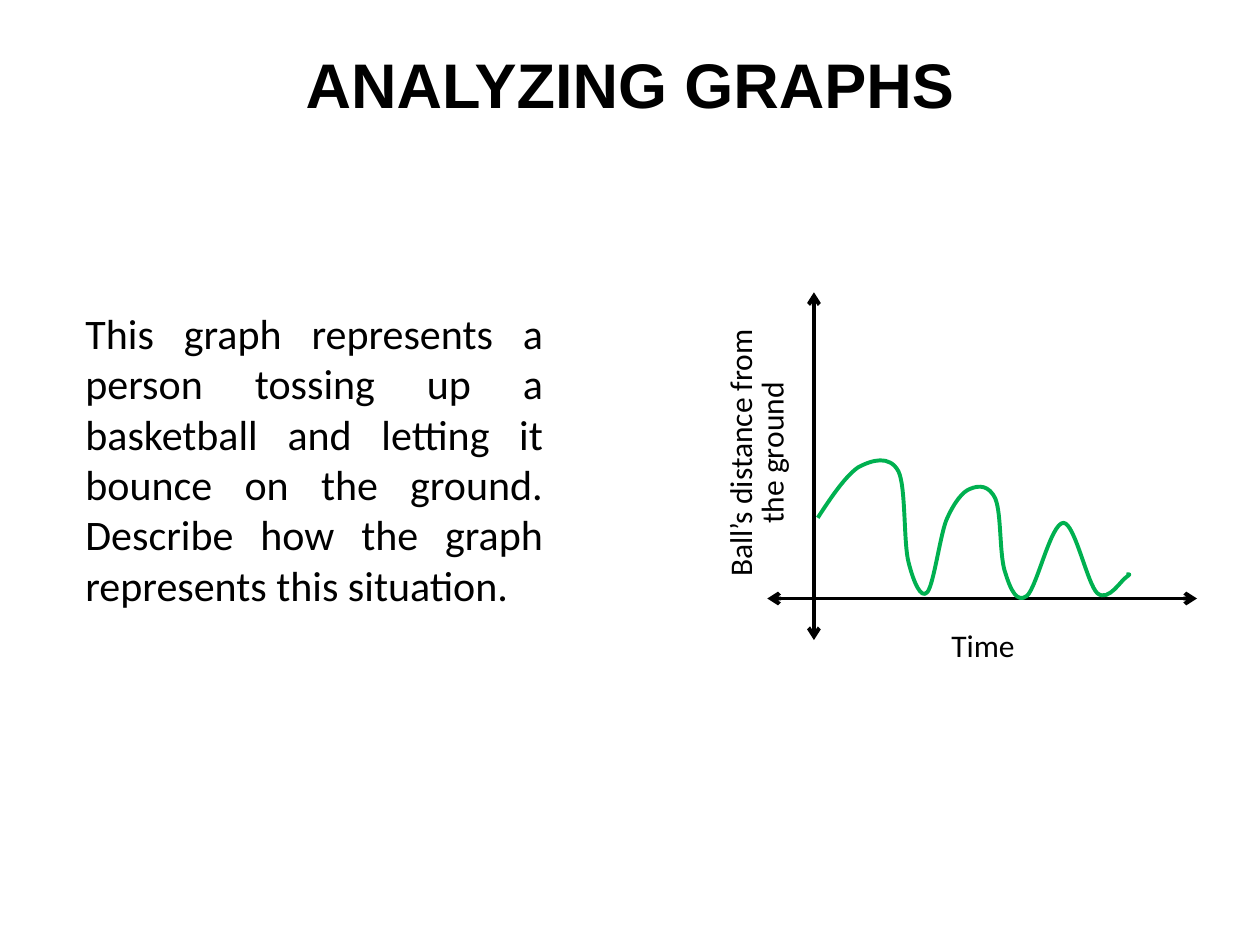
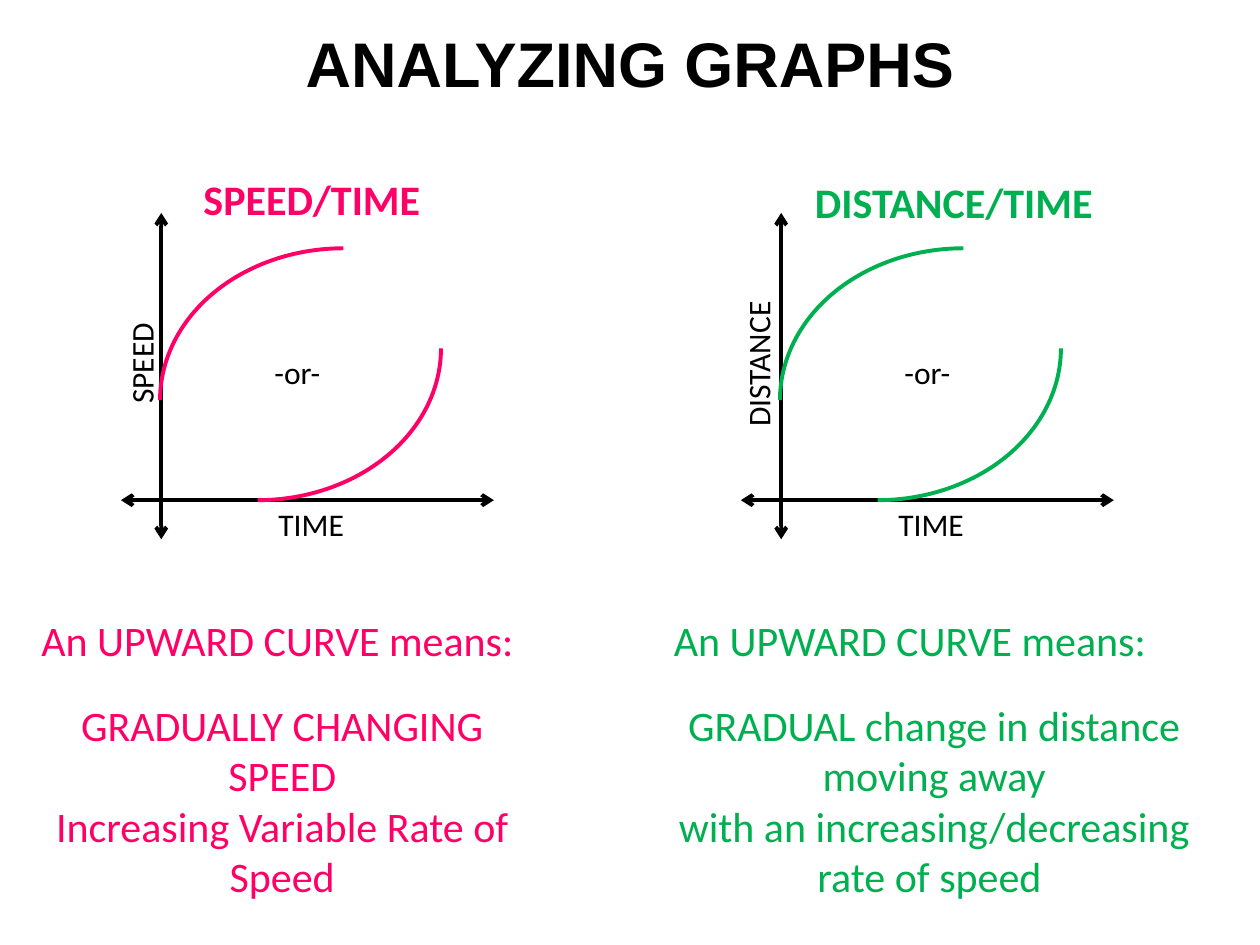
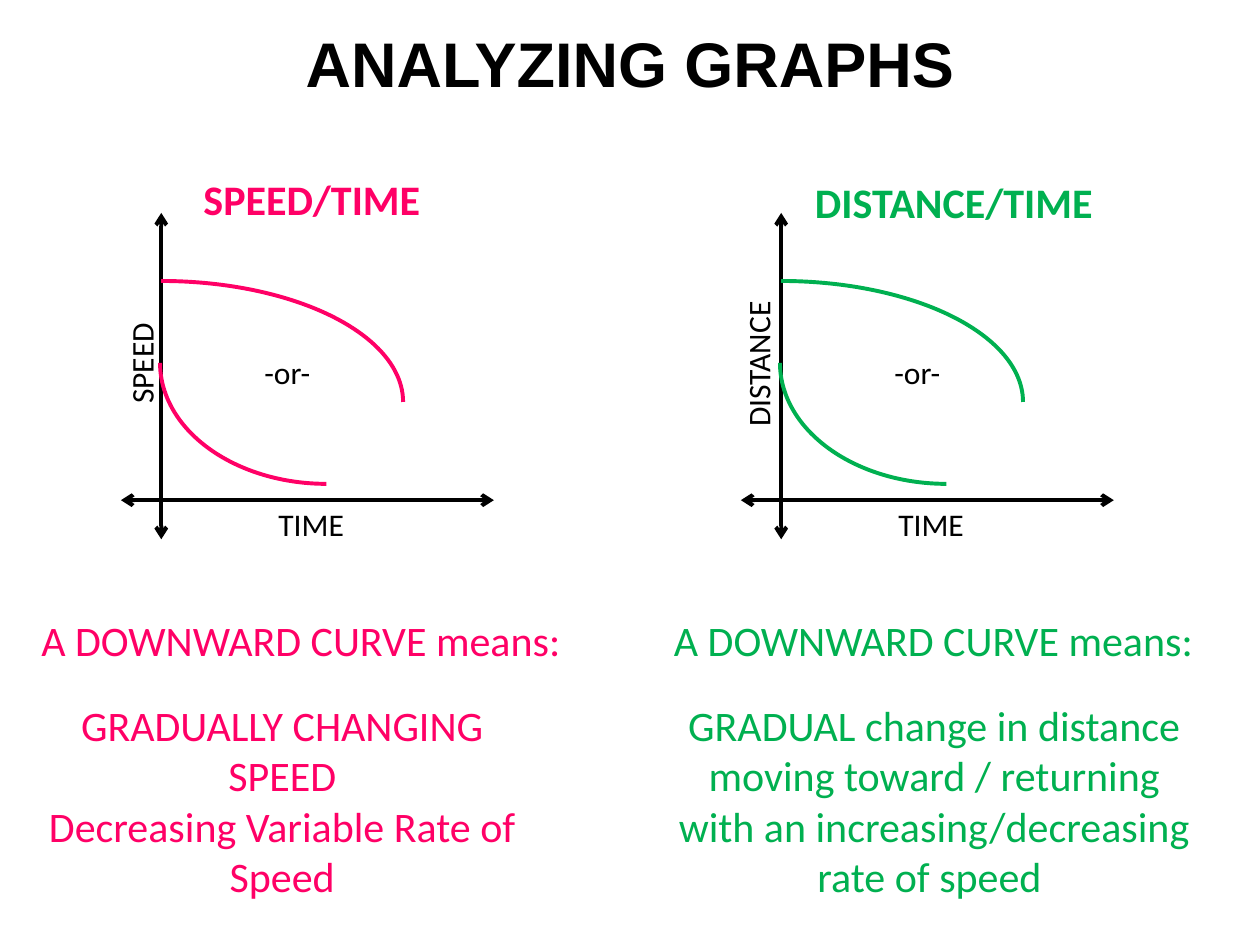
from dataclasses import dataclass

from lxml.etree import SubElement
from pptx import Presentation
from pptx.dml.color import RGBColor
from pptx.enum.shapes import MSO_CONNECTOR, MSO_SHAPE
from pptx.enum.text import MSO_ANCHOR, MSO_AUTO_SIZE, PP_ALIGN
from pptx.oxml.ns import qn
from pptx.util import Pt

EMU_PER_PX = 9144  # 100 px to the inch
BLACK = RGBColor(0x00, 0x00, 0x00)
PINK = RGBColor(0xFF, 0x00, 0x66)
GREEN = RGBColor(0x00, 0xB0, 0x50)
TITLE_FONT = "Arial"
BODY_FONT = "Calibri"
LINE_WIDTH = Pt(2.25)

# Start point, then two control points and an end point for each bounce segment
BOUNCE_START = (649, 411)
BOUNCE_SEGMENTS = [
    [(660, 394), (671, 378), (681, 371)],
    [(692, 365), (706, 361), (713, 374)],
    [(719, 386), (717, 430), (721, 446)],
    [(725, 462), (731, 476), (736, 470)],
    [(741, 464), (746, 426), (751, 413)],
    [(757, 399), (764, 390), (770, 388)],
    [(777, 385), (785, 385), (790, 396)],
    [(795, 408), (793, 442), (798, 455)],
    [(802, 468), (807, 479), (815, 473)],
    [(823, 466), (834, 415), (844, 415)],
    [(853, 415), (863, 464), (871, 471)],
    [(880, 478), (890, 460), (894, 458)],
    [(898, 455), (896, 456), (894, 456)],
]

# Box and rotation of each arc in the left panel
UPWARD_ARCS = [((84, 131, 241, 291), 90), ((152, 172, 241, 291), 270)]
DOWNWARD_ARCS = [((-64, 223, 384, 192), 0), ((127, 192, 264, 192), 180)]


@dataclass
class Panel:
    colour: RGBColor
    graph_shift: int
    or_shift: int
    heading: str
    heading_box: tuple
    axis_label: str
    axis_label_box: tuple
    lead_box: tuple
    meaning_box: tuple


SPEED_PANEL = Panel(PINK, 0, 0, "SPEED/TIME", (128, 133, 239, 50),
                    "SPEED", (-7, 273, 239, 31),
                    (23, 483, 452, 50), (23, 550, 402, 172))
DISTANCE_PANEL = Panel(GREEN, 492, 500, "DISTANCE/TIME", (625, 135, 264, 50),
                       "DISTANCE", (485, 271, 239, 36),
                       (525, 483, 458, 50), (525, 550, 433, 172))


def px(*lengths):
    return [length * EMU_PER_PX for length in lengths]


def add_text(shapes, box, paragraphs, size=18, colour=BLACK, bold=False,
             align=PP_ALIGN.CENTER, font=BODY_FONT):
    """Add a text box; each paragraph is a list of lines."""
    shape = shapes.add_textbox(*px(*box))
    frame = shape.text_frame
    frame.word_wrap = True
    frame.auto_size = MSO_AUTO_SIZE.SHAPE_TO_FIT_TEXT
    for index, lines in enumerate(paragraphs):
        paragraph = frame.add_paragraph() if index else frame.paragraphs[0]
        paragraph.alignment = align
        for line_index, line in enumerate(lines):
            if line_index:
                paragraph.add_line_break()
            run = paragraph.add_run()
            run.text = line
            run.font.name = font
            run.font.size = Pt(size)
            run.font.bold = bold
            run.font.color.rgb = colour
    return shape


def add_title(slide, top):
    shape = add_text(slide.shapes, (0, top, 1000, 83), [["ANALYZING GRAPHS"]],
                     size=36, bold=True, font=TITLE_FONT)
    shape.text_frame.auto_size = MSO_AUTO_SIZE.NONE
    shape.text_frame.vertical_anchor = MSO_ANCHOR.MIDDLE


def style_line(shape, colour):
    shape.line.color.rgb = colour
    shape.line.width = LINE_WIDTH


def add_axis(shapes, start, end):
    """Add a black line with an arrowhead at both ends."""
    axis = shapes.add_connector(MSO_CONNECTOR.STRAIGHT, *px(*start, *end))
    style_line(axis, BLACK)
    line = axis.line._get_or_add_ln()
    for end_tag in ("a:headEnd", "a:tailEnd"):
        SubElement(line, qn(end_tag), type="arrow")
    SubElement(axis._element.spPr, qn("a:effectLst"))


def add_axis_label(shapes, box, label):
    """Add a label that reads upward beside the vertical axis."""
    shape = add_text(shapes, box, [[label]])
    shape.rotation = 270
    shape.text_frame.paragraphs[0].line_spacing = Pt(18)


def add_arc(slide, box, rotation, colour):
    arc = slide.shapes.add_shape(MSO_SHAPE.ARC, *px(*box))
    arc.rotation = rotation
    arc.shadow.inherit = False
    arc.fill.background()
    style_line(arc, colour)


def add_bounce_curve(shapes):
    builder = shapes.build_freeform(*BOUNCE_START, scale=EMU_PER_PX)
    for segment in BOUNCE_SEGMENTS:
        builder.add_line_segments(segment, close=False)
    curve = builder.convert_to_shape()
    curve.shadow.inherit = False
    curve.fill.background()
    style_line(curve, GREEN)
    # Join every three straight steps into one cubic Bézier segment
    steps = list(curve._element.iter(qn("a:lnTo")))
    for first, second, third in zip(steps[::3], steps[1::3], steps[2::3]):
        first.tag = qn("a:cubicBezTo")
        for step in (second, third):
            first.append(step[0])
            step.getparent().remove(step)


def add_bounce_slide(slide):
    question = ("This graph represents a person tossing up a basketball and "
                "letting it bounce on the ground. Describe how the graph "
                "represents this situation.")
    add_text(slide.shapes, (58, 239, 383, 252), [[question]], size=24,
             align=PP_ALIGN.JUSTIFY)
    graph = slide.shapes.add_group_shape().shapes
    add_axis(graph, (646, 232), (646, 508))
    add_axis(graph, (950, 475), (609, 475))
    add_text(graph, (683, 492, 200, 40), [["Time "]])
    add_axis_label(graph, (475, 329, 255, 61), "Ball’s distance from the ground")
    add_bounce_curve(graph)
    add_title(slide, 25)


def add_panel(slide, panel, arcs, or_left, lead, meaning):
    shift = panel.graph_shift
    graph = slide.shapes.add_group_shape().shapes
    add_axis(graph, (128 + shift, 169), (128 + shift, 428))
    add_axis(graph, (392 + shift, 397), (96 + shift, 397))
    add_text(graph, (160 + shift, 396, 174, 38), [["TIME"]])
    add_axis_label(graph, panel.axis_label_box, panel.axis_label)

    add_text(slide.shapes, panel.heading_box, [[panel.heading]], size=24,
             colour=panel.colour, bold=True)
    add_text(slide.shapes, panel.lead_box, [[lead]], size=24,
             colour=panel.colour, align=PP_ALIGN.JUSTIFY)
    add_text(slide.shapes, panel.meaning_box, meaning, size=24,
             colour=panel.colour)
    for (left, *rest), rotation in arcs:
        add_arc(slide, (left + shift, *rest), rotation, panel.colour)
    add_text(slide.shapes, (or_left + panel.or_shift, 275, 67, 40), [["-or-"]],
             align=PP_ALIGN.LEFT)


def add_curve_slide(slide, arcs, or_left, lead, speed_trend, direction):
    add_title(slide, 8)
    add_panel(slide, SPEED_PANEL, arcs, or_left, lead,
              [["GRADUALLY CHANGING SPEED"],
               [f"{speed_trend} Variable Rate of Speed"]])
    add_panel(slide, DISTANCE_PANEL, arcs, or_left, lead,
              [[f"GRADUAL change in distance moving {direction}",
                "with an increasing/decreasing rate of speed "]])


def main():
    presentation = Presentation()
    presentation.slide_width, presentation.slide_height = px(1000, 750)
    blank = presentation.slide_layouts[6]
    bounce, upward, downward = [presentation.slides.add_slide(blank)
                                for _ in range(3)]
    add_bounce_slide(bounce)
    add_curve_slide(upward, UPWARD_ARCS, 208, "An UPWARD CURVE means:",
                    "Increasing", "away")
    add_curve_slide(downward, DOWNWARD_ARCS, 200, "A DOWNWARD CURVE means:",
                    "Decreasing", "toward / returning")
    presentation.save("out.pptx")


if __name__ == "__main__":
    main()
